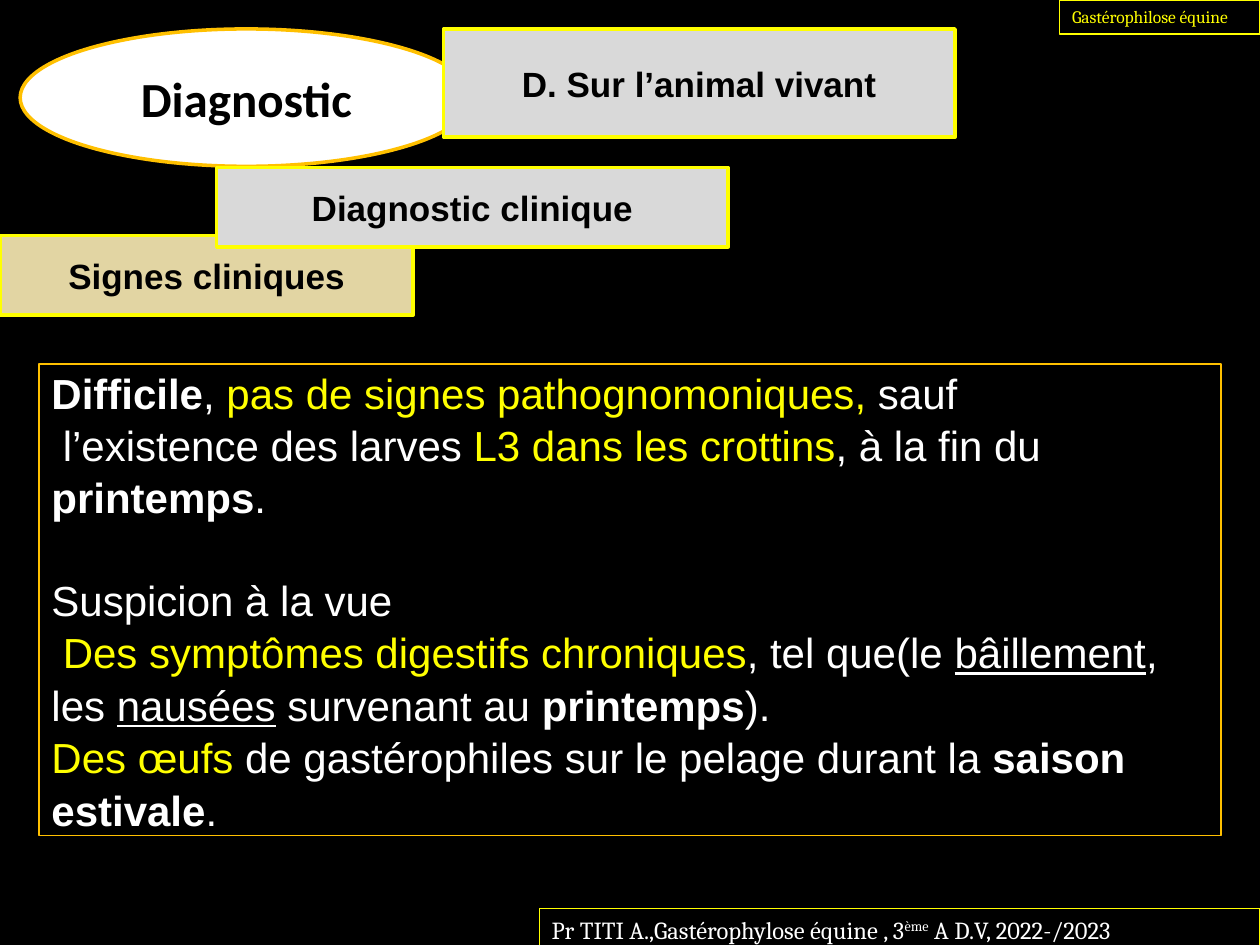
from pptx import Presentation, util as u
from pptx.dml.color import RGBColor
from pptx.enum import shapes, text

THEME = {
    "black": "000000", "white": "FFFFFF", "yellow": "FFFF00",
    "gold": "FFC000", "grey": "D9D9D9", "sand": "E2D5A3",
    "title": 28, "heading": 20, "body": 24, "header": 10, "footer": 14,
    "thick": 2, "thin": 0.75,
}

# Content: a run is plain text or (text, marks)
# y = yellow, b = bold, u = underlined, s = superscript
TITLE = "Diagnostic"
HEADINGS = [  # text, box, fill
    ("D. Sur l’animal vivant", (3.52, 0.23, 4.06, 0.86), "grey"),
    ("Signes cliniques", (0, 1.87, 3.28, 0.63), "sand"),
    ("Diagnostic clinique", (1.72, 1.33, 4.06, 0.63), "grey"),
]
FINDINGS = [  # paragraph format, runs
    ({}, [("Difficile", "b"), ", ", ("pas de signes pathognomoniques, ", "y"),
          "sauf"]),
    ({"indent": 0.09},
     ["l’existence des larves ", ("L3 dans les crottins", "y"),
      ", à la fin du ", ("printemps", "b"), "."]),
    ({"before": 28.75}, ["Suspicion à la vue"]),
    ({"indent": 0.09},
     [("Des symptômes digestifs chroniques", "y"), ", tel que(le ",
      ("bâillement", "u"), ", les ", ("nausées", "u"), " survenant au ",
      ("printemps", "b"), ")."]),
    ({}, [("Des œufs ", "y"), "de gastérophiles sur le pelage durant la ",
          ("saison estivale", "b"), "."]),
]
HEADER = "Gastérophilose équine"
FOOTER = ["Pr TITI A.,Gastérophylose équine , 3", ("ème", "s"),
          " A D.V, 2022-/2023"]


def color(name):
    return RGBColor.from_string(THEME[name])


def add_box(slide, box, line, width, fill=None, kind="RECTANGLE"):
    shape = slide.shapes.add_shape(
        getattr(shapes.MSO_SHAPE, kind), *(u.Inches(v) for v in box))
    shape.shadow.inherit = False
    if fill:
        shape.fill.solid()
        shape.fill.fore_color.rgb = color(fill)
    else:
        shape.fill.background()
    shape.line.color.rgb = color(line)
    shape.line.width = u.Pt(THEME[width])
    return shape


def write(shape, paragraphs, *, size, ink, font="Arial", bold=False,
          align="LEFT", anchor="MIDDLE", spacing=1.0):
    """Fill a shape with (paragraph format, runs) pairs."""
    frame = shape.text_frame
    frame.word_wrap = True
    frame.vertical_anchor = getattr(text.MSO_ANCHOR, anchor)
    for i, (layout, runs) in enumerate(paragraphs):
        para = frame.paragraphs[0] if i == 0 else frame.add_paragraph()
        para.alignment = getattr(text.PP_ALIGN, align)
        para.line_spacing = spacing
        para.space_before = u.Pt(layout.get("before", 0))
        if "indent" in layout:
            para._p.get_or_add_pPr().set(
                "indent", str(u.Inches(layout["indent"])))
        for item in runs:
            words, marks = (item, "") if isinstance(item, str) else item
            run = para.add_run()
            run.text = words
            run.font.name = font
            run.font.size = u.Pt(THEME[size])
            run.font.bold = bold or "b" in marks
            run.font.underline = "u" in marks
            run.font.color.rgb = color("yellow" if "y" in marks else ink)
            if "s" in marks:
                run._r.get_or_add_rPr().set("baseline", "30000")


def main():
    deck = Presentation()
    deck.slide_width, deck.slide_height = u.Inches(10), u.Inches(7.5)
    slide = deck.slides.add_slide(deck.slide_layouts[6])
    slide.background.fill.solid()
    slide.background.fill.fore_color.rgb = color("black")

    # Title and its cascade of headings
    title = add_box(slide, (0.16, 0.23, 3.59, 1.09), "gold", "thick",
                    "white", "OVAL")
    write(title, [({}, [TITLE])], size="title", ink="black", font="Calibri",
          bold=True, align="CENTER")
    for words, box, fill in HEADINGS:
        heading = add_box(slide, box, "yellow", "thick", fill)
        write(heading, [({}, [words])], size="heading", ink="black",
              bold=True, align="CENTER")

    # Clinical findings
    findings = add_box(slide, (0.31, 2.89, 9.38, 3.74), "gold", "thin")
    write(findings, FINDINGS, size="body", ink="white", spacing=1.04)

    # Running header and footer
    header = add_box(slide, (8.41, 0, 1.59, 0.27), "yellow", "thin")
    write(header, [({}, [HEADER])], size="header", ink="yellow",
          font="Cambria", anchor="TOP")
    footer = add_box(slide, (4.28, 7.21, 5.72, 0.34), "yellow", "thin")
    write(footer, [({}, FOOTER)], size="footer", ink="white",
          font="Cambria", anchor="TOP")

    deck.save("out.pptx")


if __name__ == "__main__":
    main()
